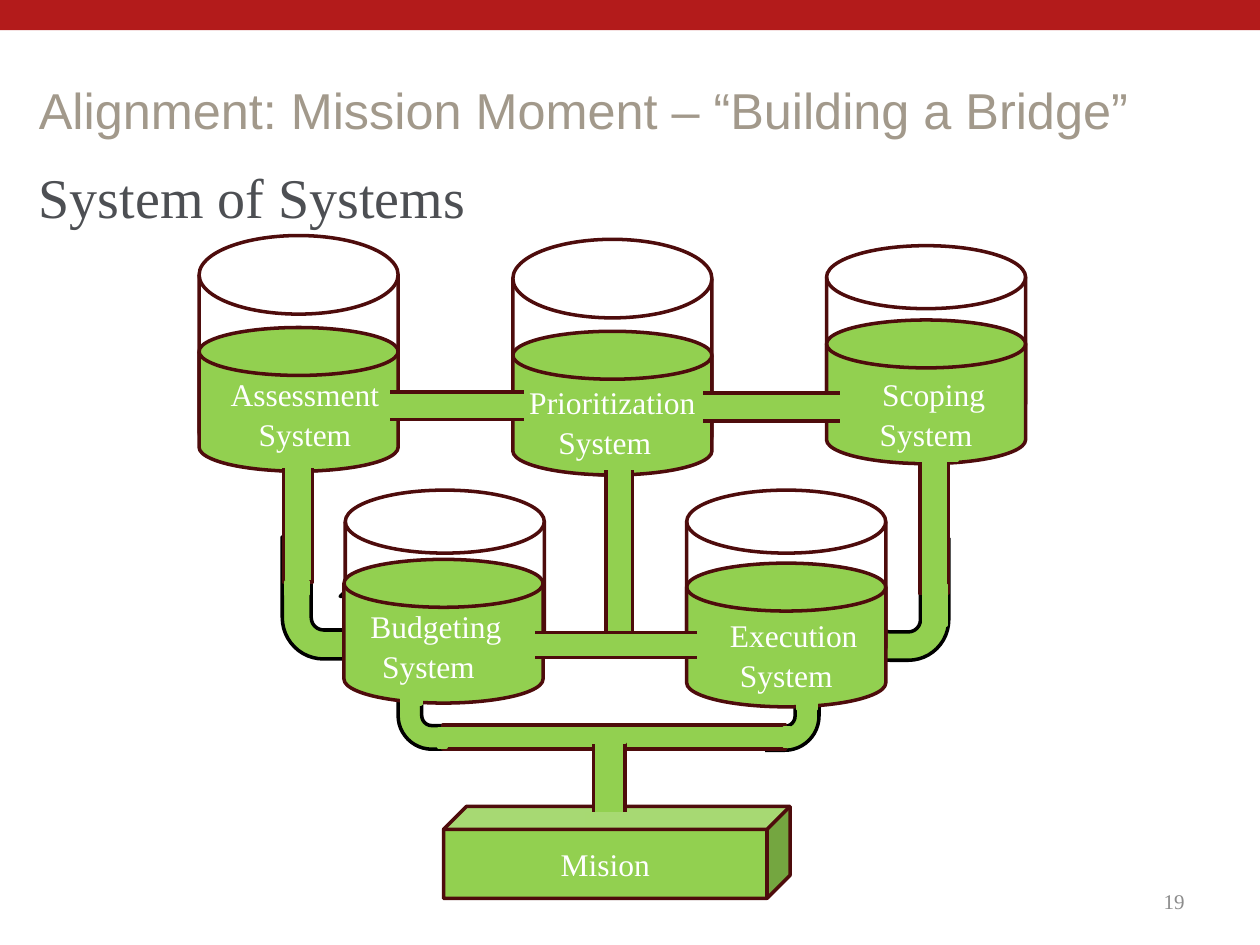
from pptx import Presentation
from pptx.dml.color import RGBColor
from pptx.enum.shapes import MSO_SHAPE
from pptx.enum.text import MSO_ANCHOR, PP_ALIGN
from pptx.util import Inches, Pt

COLORS = {"banner": "B31B1B", "title": "A2998B", "body": "4D4F53", "number": "8C8C8C",
          "green": "92D050", "top": "A7D972", "outline": "4E0C0C",
          "white": "FFFFFF", "black": "000000"}
SERIF = "Times New Roman"

deck = Presentation()
deck.slide_width, deck.slide_height = Inches(10), Inches(7.5)
page = deck.slides.add_slide(deck.slide_layouts[6])


def add_part(kind, frame, fill, line, rotation=0, adjustments=(), mirrored=False):
    part = page.shapes.add_shape(kind, *[Inches(length) for length in frame])
    part.shadow.inherit = False
    part.fill.solid()
    part.fill.fore_color.rgb = RGBColor.from_string(COLORS[fill])
    if line:
        part.line.color.rgb = RGBColor.from_string(COLORS[line])
        part.line.width = Pt(2)
    else:
        part.line.fill.background()
    part.rotation = rotation
    for index, value in enumerate(adjustments):
        part.adjustments[index] = value
    if mirrored:
        part._element.spPr.xfrm.set("flipH", "1")
    return part


def write(box, lines, size, color, font=SERIF, align=PP_ALIGN.LEFT,
          anchor=MSO_ANCHOR.TOP, spacing=None):
    frame = box.text_frame
    frame.word_wrap = True
    frame.vertical_anchor = anchor
    for index, line in enumerate(lines):
        para = frame.add_paragraph() if index else frame.paragraphs[0]
        para.text = line
        para.alignment = align
        para.line_spacing = spacing
        para.font.size = Pt(size)
        para.font.name = font
        para.font.color.rgb = RGBColor.from_string(COLORS[color])
        if index:  # second lines sit slightly left of centre
            para._p.get_or_add_pPr().set("marR", str(Inches(0.12)))


# Banner, headings and page number
add_part(MSO_SHAPE.RECTANGLE, (0, 0, 10, 0.24), "banner", None)
number = page.shapes.add_textbox(Inches(7.17), Inches(6.95), Inches(2.33), Inches(0.4))
write(number, ["19"], 12, "number", align=PP_ALIGN.RIGHT, anchor=MSO_ANCHOR.MIDDLE)
body = page.shapes.add_textbox(Inches(0.21), Inches(1.21), Inches(9.49), Inches(4.78))
write(body, ["System of Systems"], 32, "body", spacing=1.06)
title = page.shapes.add_textbox(Inches(0.21), Inches(0.49), Inches(9.49), Inches(0.75))
write(title, ["Alignment: Mission Moment – “Building a Bridge”"], 28.8, "title",
      font="Arial", anchor=MSO_ANCHOR.MIDDLE)

# Mission block
mission = add_part(MSO_SHAPE.CUBE, (3.52, 6.4, 2.75, 0.73), "green", "outline")
write(mission, ["Mision"], 18, "white", align=PP_ALIGN.CENTER, anchor=MSO_ANCHOR.MIDDLE)

# Tanks: glass left, top, height, then liquid left, top
upper_tanks = [(1.58, 1.87, 1.87, 1.58, 2.6), (4.07, 1.9, 1.87, 4.07, 2.63),
               (6.56, 1.95, 1.5, 6.56, 2.54)]
lower_tanks = [(2.74, 3.89, 1.5, 2.73, 4.44), (5.45, 3.89, 1.5, 5.45, 4.47)]

# Plumbing between the tank rows, from back to front
plumbing = [
    ("pipe", (3.51, 2.63, 0.22, 1.18), 270, False),
    ("pipe", (6, 2.64, 0.22, 1.18), 270, False),
    ("low bend", (5.65, 5.2, 0.76, 0.94), 90, False),
    ("mask", (5.14, 4.91, 0.92, 1.2), 0, False),
    ("mask", (5.94, 4.99, 0.62, 0.4), 0, False),
    ("low bend", (3.27, 5.18, 0.75, 0.97), 270, True),
    ("mask", (3.6, 4.98, 0.84, 1.13), 0, False),
    ("mask", (3.14, 5.06, 0.57, 0.38), 0, False),
    ("pipe", (4.78, 4.49, 0.19, 2.72), 270, False),
    ("pipe", (4.71, 5.89, 0.25, 0.6), 0, False),
    ("pipe", (4.81, 3.71, 0.21, 1.35), 0, False),
    ("bend", (6.63, 4.27, 0.9, 0.97), 180, False),
    ("mask", (6.5, 4.47, 0.63, 0.48), 0, False),
    ("pipe", (7.3, 3.62, 0.23, 1.09), 0, False),
    ("mask", (2.65, 4.46, 0.65, 0.48), 0, False),
    ("bend", (2.24, 4.26, 0.92, 0.97), 180, True),
    ("pipe", (2.25, 3.63, 0.23, 0.99), 0, False),
]
styles = {
    "pipe": (MSO_SHAPE.CAN, "green", "outline", (0,)),
    "mask": (MSO_SHAPE.RECTANGLE, "white", "white", ()),
    "bend": (MSO_SHAPE.U_TURN_ARROW, "green", "black", (0.25, 0.25, 0.25, 0.357, 0.75)),
    "low bend": (MSO_SHAPE.U_TURN_ARROW, "green", "black", (0.25, 0.25, 0.302, 0.357, 0.75)),
}

for tanks, pipes in ((upper_tanks, plumbing),
                     (lower_tanks, [("pipe", (4.79, 4.42, 0.2, 1.4), 270, False)])):
    for left, top, height, liquid_left, liquid_top in tanks:
        for frame, fill in (((left, top, 1.58, height), "white"),
                            ((liquid_left, liquid_top, 1.58, 1.14), "green")):
            add_part(MSO_SHAPE.FLOWCHART_MAGNETIC_DISK, frame, fill, "outline")
    for name, frame, rotation, mirrored in pipes:
        kind, fill, line, adjustments = styles[name]
        add_part(kind, frame, fill, line, rotation, adjustments, mirrored)

# Patches that open the joints between pipes and tanks
joints = [(left, top, 0.1, 0.32) for left, top in
          ((2.98, 3.09), (4.17, 3.06), (5.47, 3.09), (6.68, 3.03), (5.55, 4.93), (4.13, 4.95))]
joints += [(left, top, 0.32, 0.1) for left, top in
           ((4.64, 5.79), (4.75, 5.05), (2.22, 3.6), (4.75, 3.62))]
joints += [(2.27, 4.62, 0.18, 0.1), (7.33, 4.64, 0.18, 0.32), (6.22, 5.78, 0.05, 0.14),
           (3.48, 5.78, 0.06, 0.15), (7.28, 3.51, 0.32, 0.14),
           (3.19, 5.45, 0.15, 0.14), (6.33, 5.49, 0.15, 0.14)]
for joint in joints:
    add_part(MSO_SHAPE.RECTANGLE, joint, "green", "green")
add_part(MSO_SHAPE.RECTANGLE, (4.66, 6.46, 0.32, 0.08), "top", "top")

# Tank labels
for left, top, lines in ((1.63, 2.91, ["Assessment System"]),
                         (4.07, 2.97, ["Prioritization", "System"]),
                         (2.67, 4.75, ["Budgeting", "System"]),
                         (5.51, 4.82, ["Execution", "System"]),
                         (6.62, 2.91, ["Scoping", "System"])):
    label = page.shapes.add_textbox(Inches(left), Inches(top), Inches(1.58), Inches(0.71))
    write(label, lines, 18, "white", align=PP_ALIGN.CENTER, spacing=1.06)

deck.save("out.pptx")
